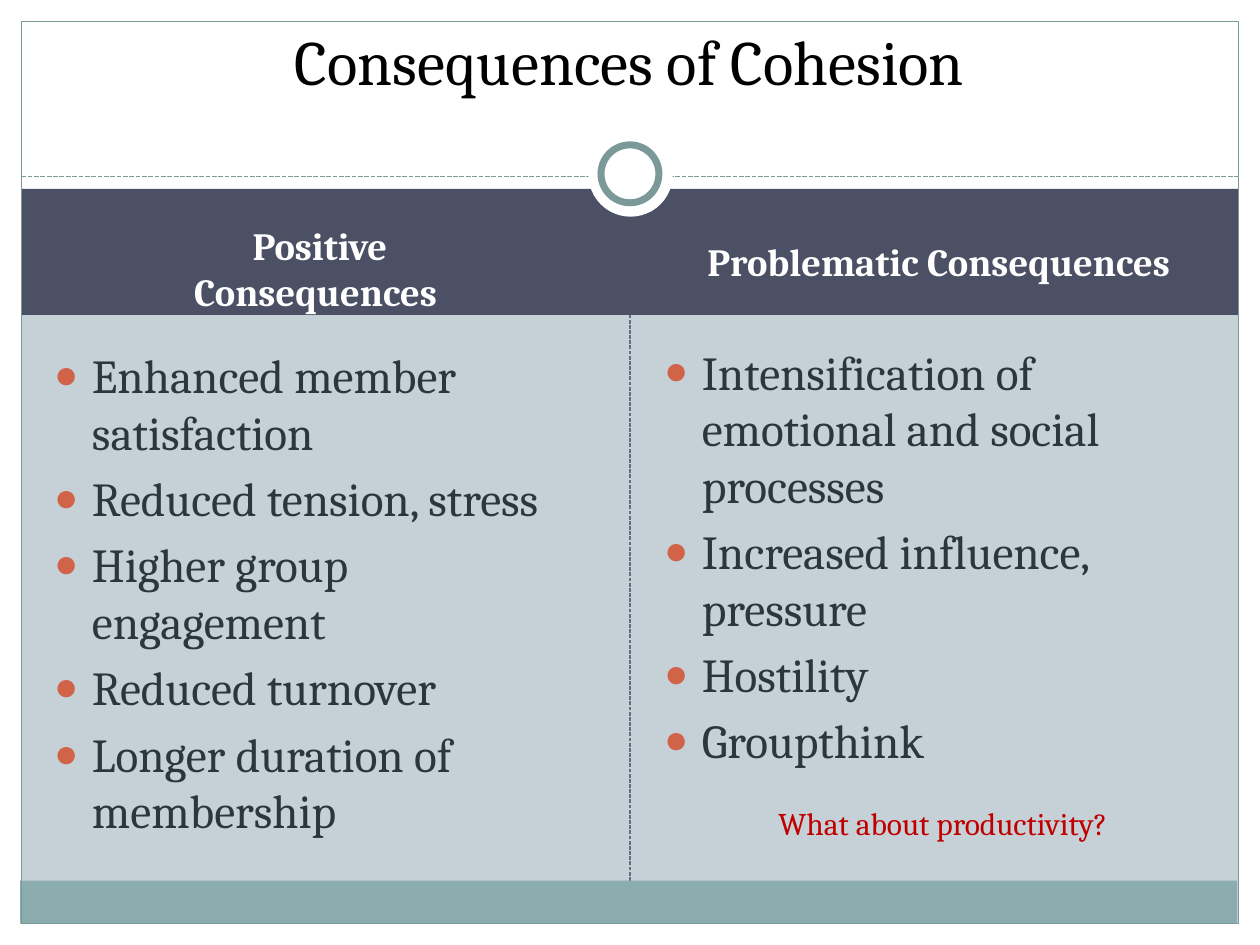
import pptx
import pptx.util
import pptx.dml.color
import pptx.enum.dml
import pptx.enum.shapes
import pptx.enum.text
from dataclasses import dataclass
from lxml import etree
from pptx.oxml.ns import qn
from pptx.util import Inches, Pt

SHAPE = pptx.enum.shapes.MSO_SHAPE
ANCHOR = pptx.enum.text.MSO_ANCHOR
CENTER = pptx.enum.text.PP_ALIGN.CENTER
LEFT = pptx.enum.text.PP_ALIGN.LEFT


@dataclass(frozen=True)
class Theme:
    font: str = "Cambria"
    white: str = "FFFFFF"
    page: str = "C5D1D7"
    band: str = "4B5064"
    footer: str = "8CADAE"
    frame: str = "7C999A"
    divider: str = "646B86"
    title: str = "000000"
    body: str = "2A373D"
    bullet: str = "D16349"
    accent: str = "C00000"
    title_size: float = 36
    header_size: float = 22
    body_size: float = 27
    note_size: float = 18


T = Theme()

POSITIVE = ["Enhanced member satisfaction", "Reduced tension, stress",
            "Higher group engagement", "Reduced turnover",
            "Longer duration of membership"]
PROBLEMATIC = ["Intensification of emotional and social processes",
               "Increased influence, pressure", "Hostility", "Groupthink"]


def rgb(color):
    return pptx.dml.color.RGBColor.from_string(color)


def fill_solid(target, color):
    target.fill.solid()
    target.fill.fore_color.rgb = rgb(color)


def add_block(s, box, fill=None, line=None, width=0.75, kind=SHAPE.RECTANGLE):
    sp = s.shapes.add_shape(kind, *map(Inches, box))
    sp.shadow.inherit = False
    if fill:
        fill_solid(sp, fill)
    else:
        sp.fill.background()
    if line:
        sp.line.color.rgb = rgb(line)
        sp.line.width = Pt(width)
    else:
        sp.line.fill.background()


def add_dashed_line(s, start, end, color, width):
    ends = map(Inches, (*start, *end))
    line = s.shapes.add_connector(pptx.enum.shapes.MSO_CONNECTOR.STRAIGHT, *ends)
    line.line.color.rgb = rgb(color)
    line.line.width = Pt(width)
    line.line.dash_style = pptx.enum.dml.MSO_LINE.SQUARE_DOT
    etree.SubElement(line._element.spPr, qn("a:effectLst"))


def set_text(sp, lines, size, color, align=LEFT, anchor=ANCHOR.TOP,
             bold=False, before=0):
    tf = sp.text_frame
    tf.word_wrap = True
    tf.auto_size = pptx.enum.text.MSO_AUTO_SIZE.NONE
    tf.vertical_anchor = anchor
    tf.text = "\n".join(lines)
    for p in tf.paragraphs:
        p.alignment = align
        p.space_before = Pt(before * size)
        p.font.name, p.font.size, p.font.bold = T.font, Pt(size), bold
        p.font.color.rgb = rgb(color)


def place(s, idx, box):
    """Move a placeholder into its box, in front of the background."""
    sp = s.placeholders[idx]
    sp.left, sp.top, sp.width, sp.height = map(Inches, box)
    s.shapes._spTree.append(sp._element)
    return sp


def add_header(s, idx, box, text):
    sp = place(s, idx, box)
    fill_solid(sp, T.band)
    set_text(sp, [text], T.header_size, T.white, CENTER, ANCHOR.MIDDLE, True, 0.2)


def add_bullets(s, idx, box, items):
    sp = place(s, idx, box)
    set_text(sp, items, T.body_size, T.body, before=0.2)
    for p in sp.text_frame.paragraphs:
        pPr = p._p.get_or_add_pPr()
        pPr.set("marL", str(Inches(0.3)))
        pPr.set("indent", str(-Inches(0.3)))
        marks = [etree.Element(qn("a:buClr")),
                 etree.Element(qn("a:buSzPct"), val="85000"),
                 etree.Element(qn("a:buChar"), char="●")]
        etree.SubElement(marks[0], qn("a:srgbClr"), val=T.bullet)
        # Bullet settings come before the default run properties
        for mark in marks:
            pPr.find(qn("a:defRPr")).addprevious(mark)


def add_background(s):
    fill_solid(s.background, T.page)
    add_dashed_line(s, (5, 6.99), (5, 2.41), T.divider, 0.75)
    # White margins
    for box in [(0, 0, 10, 1.58), (0, 7.33, 10, 0.17),
                (0, 0, 0.17, 7.5), (9.83, 0, 0.17, 7.5)]:
        add_block(s, box, T.white)
    # Header and footer bands
    add_block(s, (0.17, 1.5, 9.66, 1), T.band)
    add_block(s, (0.16, 6.99, 9.66, 0.34), T.footer)
    # Frame, rule and ring
    add_dashed_line(s, (0.17, 1.4), (9.83, 1.4), T.frame, 0.9)
    add_block(s, (0.17, 0.17, 9.66, 7.16), line=T.frame)
    add_block(s, (4.67, 1.05, 0.67, 0.67), T.white, kind=SHAPE.OVAL)
    add_block(s, (4.77, 1.15, 0.46, 0.46), T.white, T.frame, 4, SHAPE.OVAL)


def main():
    prs = pptx.Presentation()
    prs.slide_width, prs.slide_height = Inches(10), Inches(7.5)
    s = prs.slides.add_slide(prs.slide_layouts.get_by_name("Comparison"))
    add_background(s)

    # Column headers
    add_header(s, 1, (1.08, 1.75, 2.92, 0.75), "Positive Consequences\t")
    add_header(s, 3, (5.24, 1.67, 4.42, 0.8), "Problematic Consequences")

    # Title and lists
    add_bullets(s, 2, (0.33, 2.7, 4.42, 4.18), POSITIVE)
    title = place(s, 0, (0.33, 0.25, 9.33, 0.58))
    set_text(title, ["Consequences of Cohesion"], T.title_size, T.title,
             CENTER, ANCHOR.BOTTOM)
    add_bullets(s, 4, (5.17, 2.67, 4.42, 4.18), PROBLEMATIC)

    # Closing question
    note = s.shapes.add_textbox(*map(Inches, (6.08, 6.33, 3.33, 0.4)))
    set_text(note, ["What about productivity?"], T.note_size, T.accent)

    prs.save("out.pptx")


if __name__ == "__main__":
    main()
